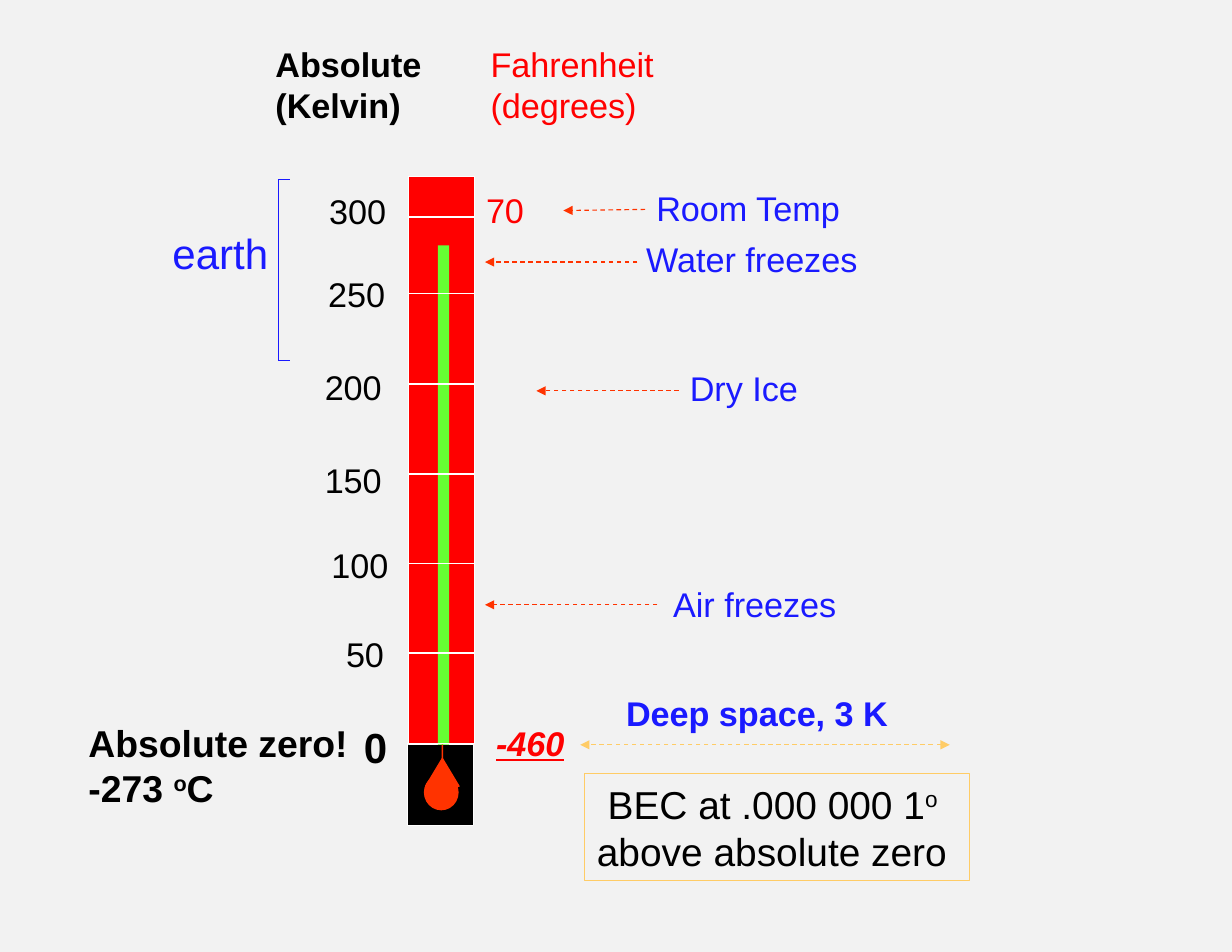
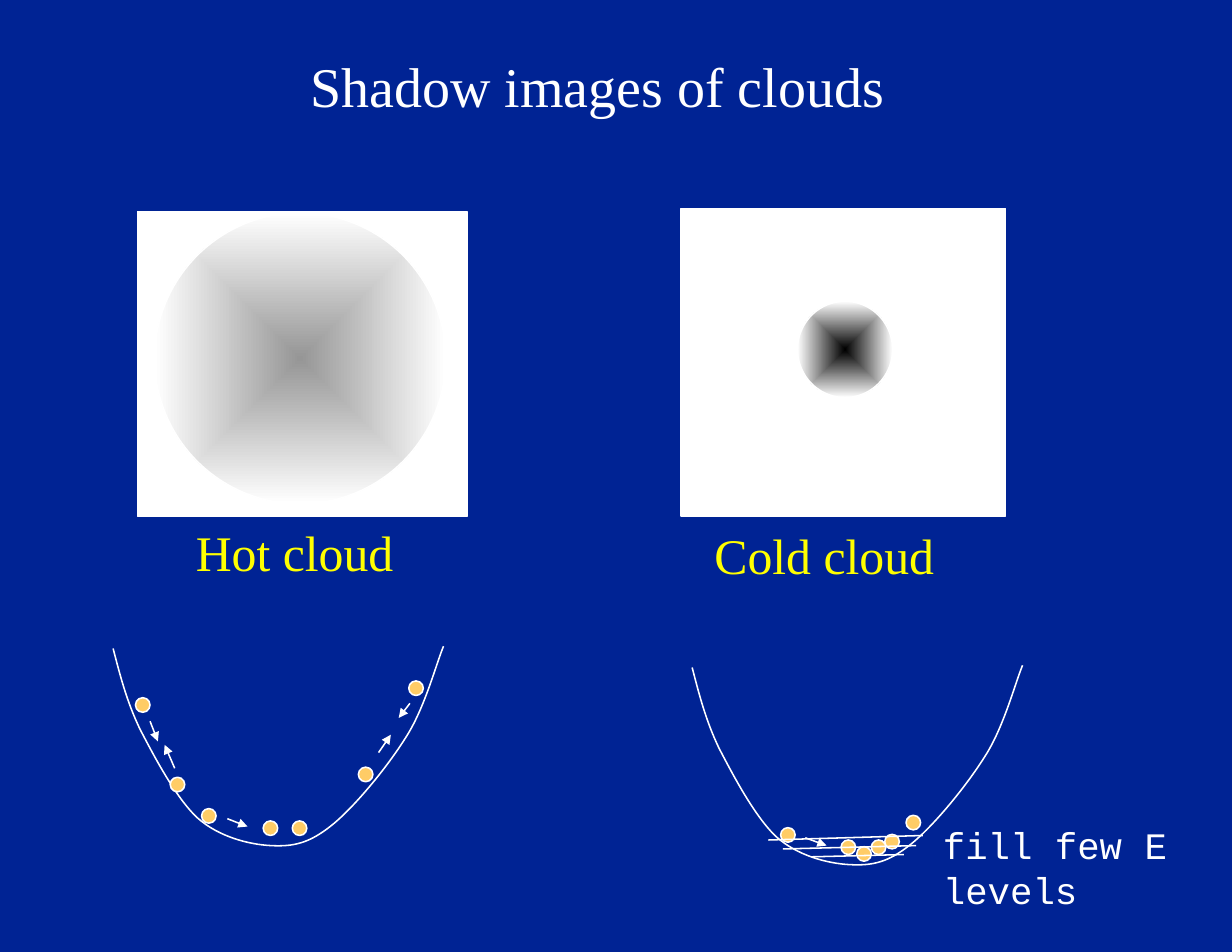
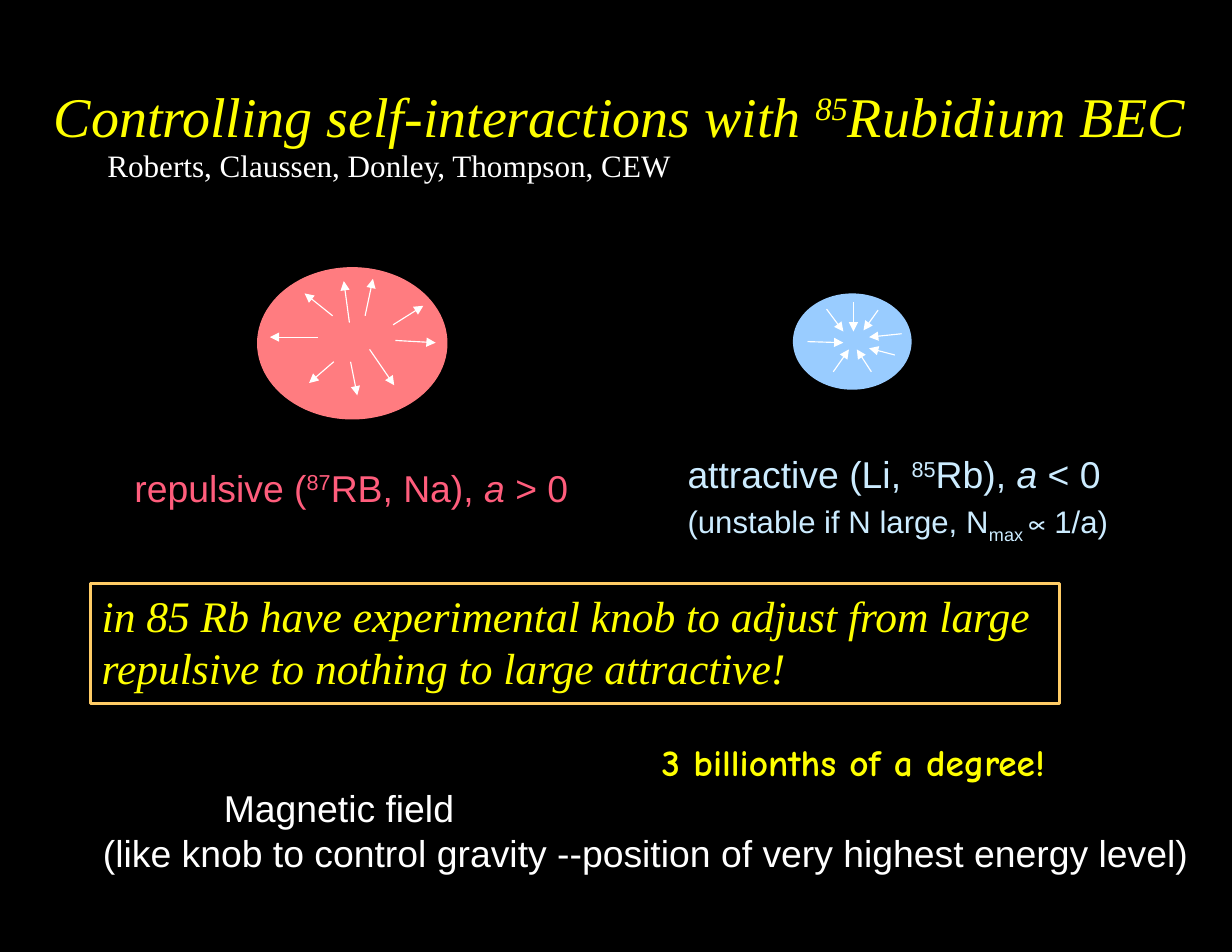
import pptx
import pptx.util
import pptx.dml.color
import pptx.enum.dml
import pptx.enum.shapes
import pptx.enum.text
import pptx.oxml.ns
from lxml import etree

Pt = pptx.util.Pt
Kind = pptx.enum.shapes.MSO_SHAPE
qn = pptx.oxml.ns.qn

HUES = {
    "black": "000000", "white": "FFFFFF", "red": "FF0000", "blue": "1A1AFF",
    "flame": "FF3300", "gold": "FFCC66", "green": "66FF33", "yellow": "FFFF00",
    "gray": "969696", "pink": "FF7C80", "rose": "FF5D7C", "sky": "99CCFF",
    "ice": "CCECFF", "pale": "F2F2F2", "navy": "002394",
}
SANS, SERIF = "Arial", "Times New Roman"
THICK = (0.11, 0.06)   # wide text margins
THIN = (0.1, 0.05)

# ---- Content: places are in inches, turned into Cm by size() ----

# Slide 1: box, lines, hue, points, marks, wrap
NOTES = [
    ((2.35, 0.33, 1.54, 0.85), ["Absolute", "(Kelvin)"], "black", 22, "b", False),
    ((4.27, 0.33, 1.7, 0.85), ["Fahrenheit", "(degrees)"], "red", 22, "", False),
    ((5.75, 1.61, 1.99, 0.48), ["Room Temp"], "blue", 22, "", True),
    ((5.66, 2.07, 2.13, 0.48), ["Water freezes"], "blue", 22, "", False),
    ((6.05, 3.22, 1.2, 0.48), ["Dry Ice"], "blue", 22, "", False),
    ((5.9, 5.15, 1.71, 0.48), ["Air freezes"], "blue", 22, "", False),
    ((5.48, 6.12, 2.6, 0.48), ["Deep space, 3 K"], "blue", 22, "b", False),
    ((0.68, 6.37, 2.56, 0.92),
     ["Absolute zero!", [("-273 ", ""), ("o", "^"), ("C", "")]], "black", 24, "b", False),
    ((4.23, 1.63, 0.73, 0.48), ["70"], "red", 22, "", True),
    ((4.32, 6.39, 0.92, 0.48), ["-460"], "red", 22, "biu", False),
    ((3.14, 6.38, 0.44, 0.57), ["0"], "black", 27, "b", False),
    ((1.43, 1.97, 1.09, 0.57), ["earth"], "blue", 27, "", False),
]
SCALE = [  # label, left, top, width
    ("300", 2.83, 1.64, 0.74), ("250", 2.82, 2.38, 0.74), ("200", 2.79, 3.21, 0.74),
    ("150", 2.79, 4.04, 0.74), ("100", 2.85, 4.8, 0.74), ("50", 2.98, 5.59, 0.57),
]
TICKS = [1.94, 2.62, 3.43, 4.23, 5.03, 5.83, 6.64]
BRACE = [(2.49, 1.6, 2.49, 3.22), (2.48, 1.6, 2.59, 1.6), (2.49, 3.22, 2.59, 3.22)]
HINTS = [(5.87, 5.4, 4.33, 5.4), (6.06, 3.49, 4.79, 3.49),
         (5.69, 2.34, 4.33, 2.34), (5.76, 1.87, 5.03, 1.88)]
BEC = [[(" BEC at .000 000 1", ""), ("o", "^"), (" above absolute zero", "")]]

# Slide 2
CLOUDS = [  # plate, cloud, core hue, label, label box, grouped
    ((1.23, 1.89, 2.94, 2.72), (1.38, 1.9, 2.6, 2.6), "gray",
     "Hot cloud", (1.65, 4.61, 1.97, 0.63), False),
    ((6.08, 1.86, 2.9, 2.75), (7.12, 2.69, 0.85, 0.86), "black",
     "Cold cloud", (6.28, 4.64, 2.18, 0.63), True),
]
BOWL = [  # start, then three points for each curve
    (1.01, 5.79), (1.07, 6.02), (1.13, 6.26), (1.25, 6.51),
    (1.38, 6.76), (1.57, 7.12), (1.76, 7.3), (1.95, 7.47), (2.22, 7.54), (2.42, 7.55),
    (2.62, 7.56), (2.76, 7.53), (2.96, 7.37), (3.16, 7.21), (3.45, 6.86), (3.62, 6.59),
    (3.79, 6.33), (3.89, 5.94), (3.96, 5.77),
]
TRAPS = [  # bowl shift, balls, arrows, levels
    ((0, 0),
     [(1.52, 6.94), (1.8, 7.22), (2.35, 7.33), (2.61, 7.33), (3.65, 6.08),
      (1.21, 6.23), (3.2, 6.85)],
     [(3.38, 6.72, 3.49, 6.56), (1.56, 6.86, 1.47, 6.65), (1.34, 6.44, 1.41, 6.62),
      (2.03, 7.31, 2.21, 7.38), (3.66, 6.28, 3.56, 6.41)],
     []),
    ((5.17, 0.17),
     [(7.9, 7.45), (6.97, 7.39), (7.51, 7.5), (7.78, 7.5), (7.65, 7.56), (8.09, 7.28)],
     [(7.19, 7.48, 7.38, 7.55)],
     [(7.25, 7.65, 8.07, 7.63), (6.99, 7.58, 8.18, 7.55), (6.86, 7.5, 8.24, 7.46)]),
]

# Slide 3
FORCES = [  # oval, hue, edge, arrows
    ((2.3, 2.39, 1.69, 1.35), "pink", "pink",
     [(2.97, 2.82, 2.72, 2.62), (2.84, 3.01, 2.41, 3.01), (2.98, 3.23, 2.76, 3.42),
      (3.13, 3.23, 3.19, 3.53), (3.3, 3.12, 3.52, 3.44), (3.53, 3.04, 3.89, 3.06),
      (3.51, 2.9, 3.78, 2.73), (3.26, 2.82, 3.33, 2.49), (3.12, 2.88, 3.07, 2.51)]),
    ((7.08, 2.62, 1.06, 0.86), "sky", None,
     [(7.62, 2.7, 7.62, 2.96), (7.38, 2.76, 7.53, 2.96), (7.21, 3.05, 7.53, 3.06),
      (7.44, 3.32, 7.58, 3.12), (7.78, 3.32, 7.65, 3.12), (7.99, 3.17, 7.76, 3.11),
      (8.05, 2.98, 7.76, 3.01), (7.84, 2.77, 7.71, 2.95)]),
]
RUBY = [[("Controlling self-interactions with ", ""), ("85", "^"), ("Rubidium BEC", "")]]
REPEL = [[(" repulsive (", ""), ("87", "^"), ("RB, Na), ", ""), ("a ", "i"), ("> 0", "")]]
DRAW = [
    [("attractive (Li, ", ""), ("85", "^"), ("Rb), ", ""), ("a ", "i"), ("< 0", "")],
    [("(unstable if N large, N", ""), ("max", "_"), ("∝1/a)", "")],
]
KNOB = ["in 85 Rb have experimental knob to adjust from large",
        "repulsive to nothing to large attractive!"]
LINES = [  # box, text, hue, points, font, marks
    ((0.82, 7.36, 10.18, 0.51),
     "(like knob to control gravity --position of very highest energy level)",
     "white", 24, SANS, ""),
    ((1.9, 6.96, 2.44, 0.5), "Magnetic field", "white", 24, SANS, ""),
    ((0.86, 1.26, 5.24, 0.43), "Roberts, Claussen, Donley, Thompson, CEW",
     "white", 20, SERIF, ""),
    ((5.81, 6.55, 4.11, 0.5), "3 billionths of a degree!", "yellow", 24, "Comic Neue", "b"),
]


# ---- Tools ----

def size(*nums):
    return [pptx.util.Cm(n * 2.54) for n in nums]


def tint(hue):
    return pptx.dml.color.RGBColor.from_string(HUES[hue])


def paint(shape, fill=None, edge=None, width=0.75):
    if fill:
        shape.fill.solid()
        shape.fill.fore_color.rgb = tint(fill)
    else:
        shape.fill.background()
    if edge:
        shape.line.color.rgb = tint(edge)
        shape.line.width = Pt(width)
    else:
        shape.line.fill.background()


def draw(pen, kind, box, fill=None, edge=None, width=0.75):
    shape = pen.add_shape(kind, *size(*box))
    shape.shadow.inherit = False
    paint(shape, fill, edge, width)
    return shape


def link(pen, ends, hue, width=0.75, dash=False, tips=()):
    line = pen.add_connector(pptx.enum.shapes.MSO_CONNECTOR.STRAIGHT, *size(*ends))
    line.line.color.rgb = tint(hue)
    line.line.width = Pt(width)
    if dash:
        line.line.dash_style = pptx.enum.dml.MSO_LINE.DASH
    stroke = line.line._get_or_add_ln()
    for tip in tips:
        etree.SubElement(stroke, qn("a:" + tip)).set("type", "triangle")
    etree.SubElement(line._element.spPr, qn("a:effectLst"))


def write(shape, paras, hue, points, font=SANS, marks="", wrap=False, gap=THIN):
    frame = shape.text_frame
    frame.word_wrap = wrap
    frame.auto_size = pptx.enum.text.MSO_AUTO_SIZE.SHAPE_TO_FIT_TEXT
    frame.vertical_anchor = pptx.enum.text.MSO_ANCHOR.TOP
    frame.margin_left = frame.margin_right = size(gap[0])[0]
    frame.margin_top = frame.margin_bottom = size(gap[1])[0]
    for n, runs in enumerate(paras):
        para = frame.add_paragraph() if n else frame.paragraphs[0]
        para.alignment = pptx.enum.text.PP_ALIGN.LEFT
        face = para.font
        face.name, face.size = font, Pt(points)
        face.color.rgb = tint(hue)
        face.bold, face.italic, face.underline = "b" in marks, "i" in marks, "u" in marks
        for text, mark in [(runs, "")] if isinstance(runs, str) else runs:
            run = para.add_run()
            run.text = text
            if mark == "i":
                run.font.italic = True
            elif mark:
                level = {"^": "30000", "_": "-25000"}[mark]
                run._r.get_or_add_rPr().set("baseline", level)
    return shape


def label(pen, box, *args, **more):
    return write(pen.add_textbox(*size(*box)), *args, **more)


def head(slide, box, *args, **more):
    title = slide.shapes.title
    title.left, title.top, title.width, title.height = size(*box)
    return write(title, *args, **more)


def start(deck, hue, layout):
    slide = deck.slides.add_slide(deck.slide_layouts[layout])
    slide.background.fill.solid()
    slide.background.fill.fore_color.rgb = tint(hue)
    return slide, slide.shapes


def glow(shape, core):
    """Fade from the core hue to white at the rim."""
    shape.fill.gradient()
    for stop, hue in zip(shape.fill.gradient_stops, (core, "white")):
        stop.color.rgb = tint(hue)
    grad = shape._element.spPr.find(qn("a:gradFill"))
    grad.remove(grad.find(qn("a:lin")))
    fade = etree.SubElement(grad, qn("a:path"))
    fade.set("path", "shape")
    spot = etree.SubElement(fade, qn("a:fillToRect"))
    for side in "ltrb":
        spot.set(side, "50000")


def curve(pen, knots, shift):
    """Draw joined cubic curves: each three line steps become one curve."""
    dots = [size(x + shift[0], y + shift[1]) for x, y in knots]
    form = pen.build_freeform(*dots[0])
    form.add_line_segments(dots[1:], close=False)
    shape = form.convert_to_shape()
    trace = next(shape._element.iter(qn("a:path")))
    steps = trace.findall(qn("a:lnTo"))
    for n in range(0, len(steps), 3):
        bend = etree.SubElement(trace, qn("a:cubicBezTo"))
        for step in steps[n:n + 3]:
            bend.append(step[0])
            trace.remove(step)
    shape.shadow.inherit = False
    paint(shape, edge="white", width=1)


# ---- Slides ----

def heat(deck):
    _, pen = start(deck, "pale", 6)
    for box, paras, hue, points, marks, wrap in NOTES:
        label(pen, box, paras, hue, points, marks=marks, wrap=wrap, gap=THICK)
    for text, left, top, width in SCALE:
        label(pen, (left, top, width, 0.48), [text], "black", 22, gap=THICK)
    frame = draw(pen, Kind.RECTANGLE, (5.22, 6.91, 3.44, 0.95), edge="gold")
    write(frame, BEC, "black", 25, wrap=True, gap=THICK)
    # Bulb and tube
    draw(pen, Kind.RECTANGLE, (3.64, 6.64, 0.59, 0.73), "black", "white")
    draw(pen, Kind.OVAL, (3.79, 6.92, 0.3, 0.31), "flame", "flame")
    draw(pen, Kind.ISOSCELES_TRIANGLE, (3.8, 6.77, 0.3, 0.25), "flame", "flame")
    draw(pen, Kind.RECTANGLE, (3.65, 1.58, 0.59, 5.07), "red", "white")
    link(pen, (3.95, 6.91, 3.94, 2.22), "flame", 1)
    # Bracket and arrows
    for ends in BRACE:
        link(pen, ends, "blue")
    for ends in HINTS:
        link(pen, ends, "flame", dash=True, tips=["tailEnd"])
    link(pen, (8.48, 6.65, 5.18, 6.65), "gold", dash=True, tips=["headEnd", "tailEnd"])
    # Column and ticks
    draw(pen, Kind.RECTANGLE, (3.91, 2.19, 0.1, 4.46), "green")
    for y in TICKS:
        link(pen, (3.65, y, 4.24, y), "white", 1)


def clouds(deck):
    slide, pen = start(deck, "navy", 5)
    head(slide, (2.67, 0.41, 5.33, 0.7), ["Shadow images of clouds"], "white", 36, SERIF)
    for plate, cloud, core, text, box, grouped in CLOUDS:
        spot = pen.add_group_shape().shapes if grouped else pen
        draw(spot, Kind.RECTANGLE, plate, "white", "white", 1)
        glow(draw(spot, Kind.OVAL, cloud, "white", "white", 1), core)
        label(pen, box, [text], "yellow", 32, SERIF)
    for shift, balls, moves, levels in TRAPS:
        curve(pen, BOWL, shift)
        for x, y in balls:
            draw(pen, Kind.OVAL, (x, y, 0.13, 0.13), "gold", "white", 1)
        for ends in moves:
            link(pen, ends, "white", 1, tips=["tailEnd"])
        for ends in levels:
            link(pen, ends, "white", 1)
    label(pen, (8.32, 7.29, 2.39, 0.5), ["fill few E levels"], "white", 24,
          "Courier New", wrap=True)


def control(deck):
    slide, pen = start(deck, "black", 5)
    title = head(slide, (0.38, 0.68, 10.45, 0.7), RUBY, "yellow", 36, SERIF, "i", wrap=True)
    paint(title, "black")
    label(pen, (1.01, 4.1, 4.76, 0.5), REPEL, "rose", 24, wrap=True)
    for oval, hue, edge, moves in FORCES:
        group = pen.add_group_shape().shapes
        draw(group, Kind.OVAL, oval, hue, edge)
        for ends in moves:
            link(group, ends, "white", tips=["tailEnd"])
    pull = label(pen, (6.04, 3.98, 4.41, 0.83), DRAW, "ice", 24, wrap=True)
    limit = pull.text_frame.paragraphs[1]
    limit.font.size, limit.space_before = Pt(20), Pt(4)
    frame = draw(pen, Kind.RECTANGLE, (0.81, 5.21, 8.65, 1.07), edge="gold", width=2.25)
    write(frame, KNOB, "yellow", 28, SERIF, "i")
    for box, text, hue, points, font, marks in LINES:
        label(pen, box, [text], hue, points, font, marks)


def main():
    deck = pptx.Presentation()
    deck.slide_width, deck.slide_height = size(11, 8.5)
    for build in (heat, clouds, control):
        build(deck)
    deck.save("out.pptx")


if __name__ == "__main__":
    main()
